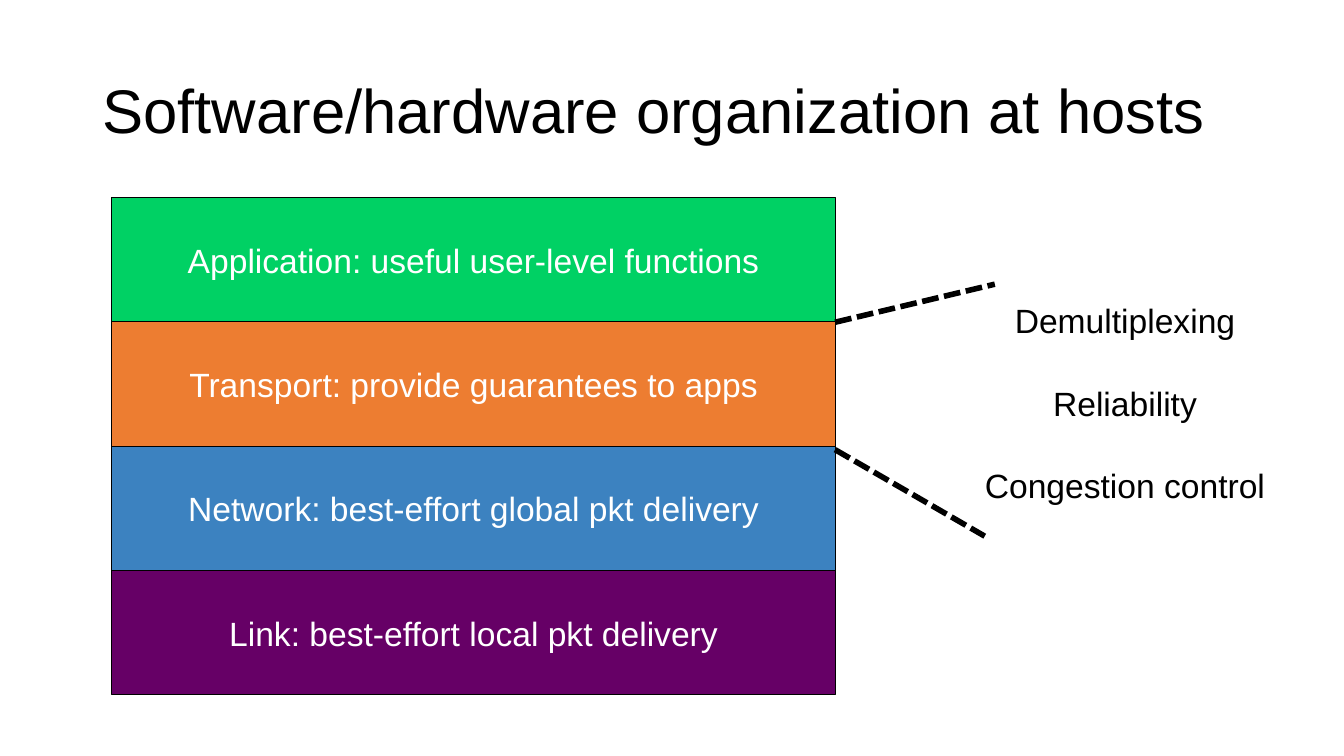
from pptx import Presentation
from pptx.dml.color import RGBColor
from pptx.enum.dml import MSO_LINE
from pptx.enum.shapes import MSO_CONNECTOR, MSO_SHAPE
from pptx.enum.text import MSO_ANCHOR, MSO_AUTO_SIZE, PP_ALIGN
from pptx.oxml.ns import qn
from pptx.util import Pt
from lxml import etree

RECTANGLE = MSO_SHAPE.RECTANGLE
STRAIGHT = MSO_CONNECTOR.STRAIGHT
SHORT_DASH = MSO_LINE.SQUARE_DOT
MIDDLE = MSO_ANCHOR.MIDDLE
LEFT, CENTER = PP_ALIGN.LEFT, PP_ALIGN.CENTER
NO_AUTOFIT = MSO_AUTO_SIZE.NONE

BLACK = RGBColor(0x00, 0x00, 0x00)
WHITE = RGBColor(0xFF, 0xFF, 0xFF)
GREEN = RGBColor(0x00, 0xD1, 0x64)
ORANGE = RGBColor(0xED, 0x7D, 0x31)
BLUE = RGBColor(0x3C, 0x82, 0xC0)
PURPLE = RGBColor(0x66, 0x00, 0x66)

FONT = "Arial"
TITLE_SIZE = 44
BODY_SIZE = 24

LAYERS = [
    ("Application: useful user-level functions", GREEN),
    ("Transport: provide guarantees to apps", ORANGE),
    ("Network: best-effort global pkt delivery", BLUE),
    ("Link: best-effort local pkt delivery", PURPLE),
]
STACK_LEFT, STACK_TOP = 79.9, 141.1
LAYER_WIDTH, LAYER_HEIGHT = 516.6, 88.8

TRANSPORT_DUTIES = ["Demultiplexing", "Reliability", "Congestion control"]
DUTY_GAP = 30


def format_paragraph(paragraph, size, color, alignment):
    paragraph.alignment = alignment
    paragraph.font.name = FONT
    paragraph.font.size = Pt(size)
    paragraph.font.color.rgb = color


def set_title(slide, text):
    title = slide.shapes.title
    title.left, title.top = Pt(66), Pt(29)
    title.width, title.height = Pt(861), Pt(104.4)
    frame = title.text_frame
    frame.text = text
    frame.auto_size = NO_AUTOFIT
    frame.vertical_anchor = MIDDLE
    paragraph = frame.paragraphs[0]
    paragraph.line_spacing = 0.9
    format_paragraph(paragraph, TITLE_SIZE, BLACK, LEFT)


def add_layer(slide, top, text, color):
    layer = slide.shapes.add_shape(
        RECTANGLE, Pt(STACK_LEFT), Pt(top), Pt(LAYER_WIDTH), Pt(LAYER_HEIGHT))
    layer.shadow.inherit = False
    layer.fill.solid()
    layer.fill.fore_color.rgb = color
    layer.line.color.rgb = BLACK
    layer.line.width = Pt(0.75)
    frame = layer.text_frame
    frame.text = text
    frame.word_wrap = False
    frame.vertical_anchor = MIDDLE
    format_paragraph(frame.paragraphs[0], BODY_SIZE, WHITE, CENTER)


def add_spaced_list(slide, left, top, width, height, items):
    box = slide.shapes.add_textbox(Pt(left), Pt(top), Pt(width), Pt(height))
    frame = box.text_frame
    frame.word_wrap = True
    frame.text = "\n".join(items)
    for paragraph in frame.paragraphs:
        format_paragraph(paragraph, BODY_SIZE, BLACK, CENTER)
    for paragraph in frame.paragraphs[1:]:
        paragraph.space_before = Pt(DUTY_GAP)


def add_dashed_line(slide, start_x, start_y, end_x, end_y):
    connector = slide.shapes.add_connector(
        STRAIGHT, Pt(start_x), Pt(start_y), Pt(end_x), Pt(end_y))
    connector.line.color.rgb = BLACK
    connector.line.width = Pt(4)
    connector.line.dash_style = SHORT_DASH
    etree.SubElement(connector.element.spPr, qn("a:effectLst"))


def main():
    presentation = Presentation()
    presentation.slide_width, presentation.slide_height = Pt(960), Pt(540)
    slide = presentation.slides.add_slide(presentation.slide_layouts[5])

    set_title(slide, "Software/hardware organization at hosts")
    for index, (text, color) in enumerate(LAYERS):
        add_layer(slide, STACK_TOP + index * LAYER_HEIGHT, text, color)

    add_spaced_list(slide, 653.8, 211, 299.5, 152.6, TRANSPORT_DUTIES)
    stack_right = STACK_LEFT + LAYER_WIDTH
    add_dashed_line(slide, stack_right, 230.2, 710.6, 203)
    add_dashed_line(slide, stack_right, 321.2, 703.4, 383)

    presentation.save("out.pptx")


if __name__ == "__main__":
    main()
